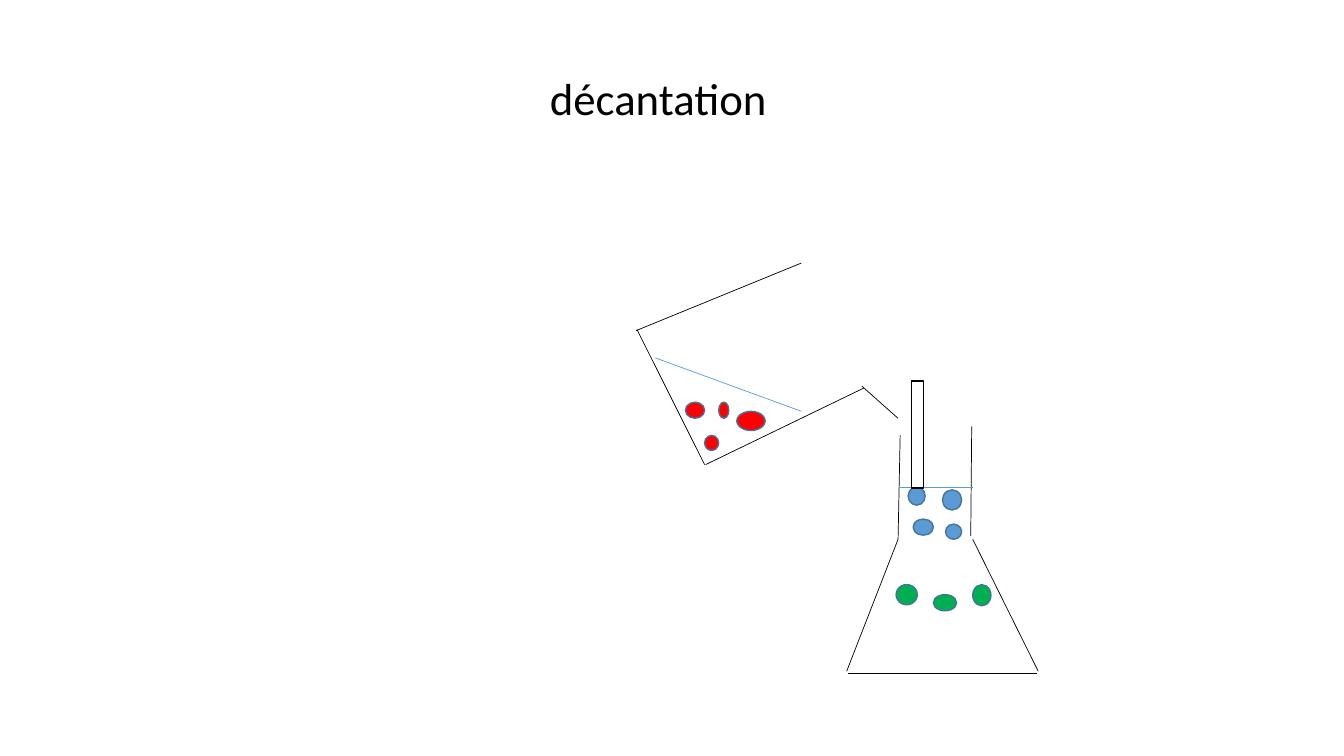
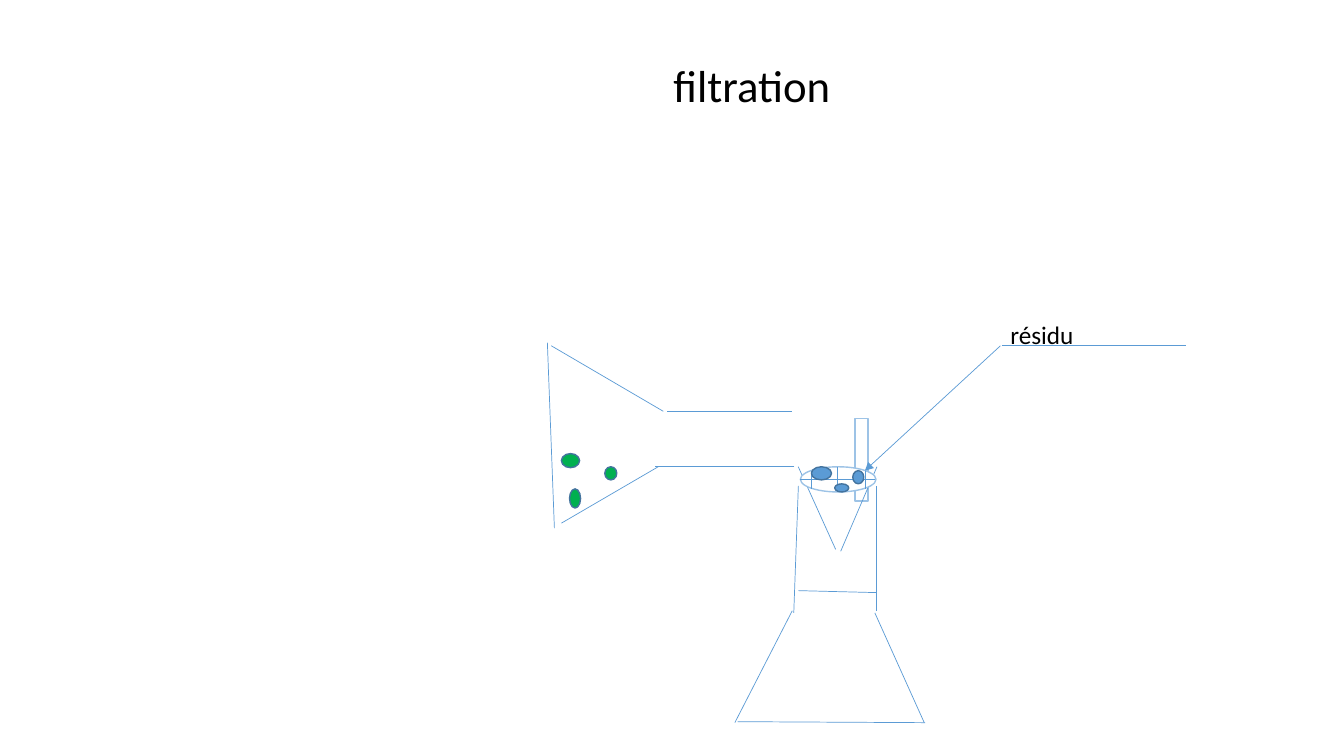
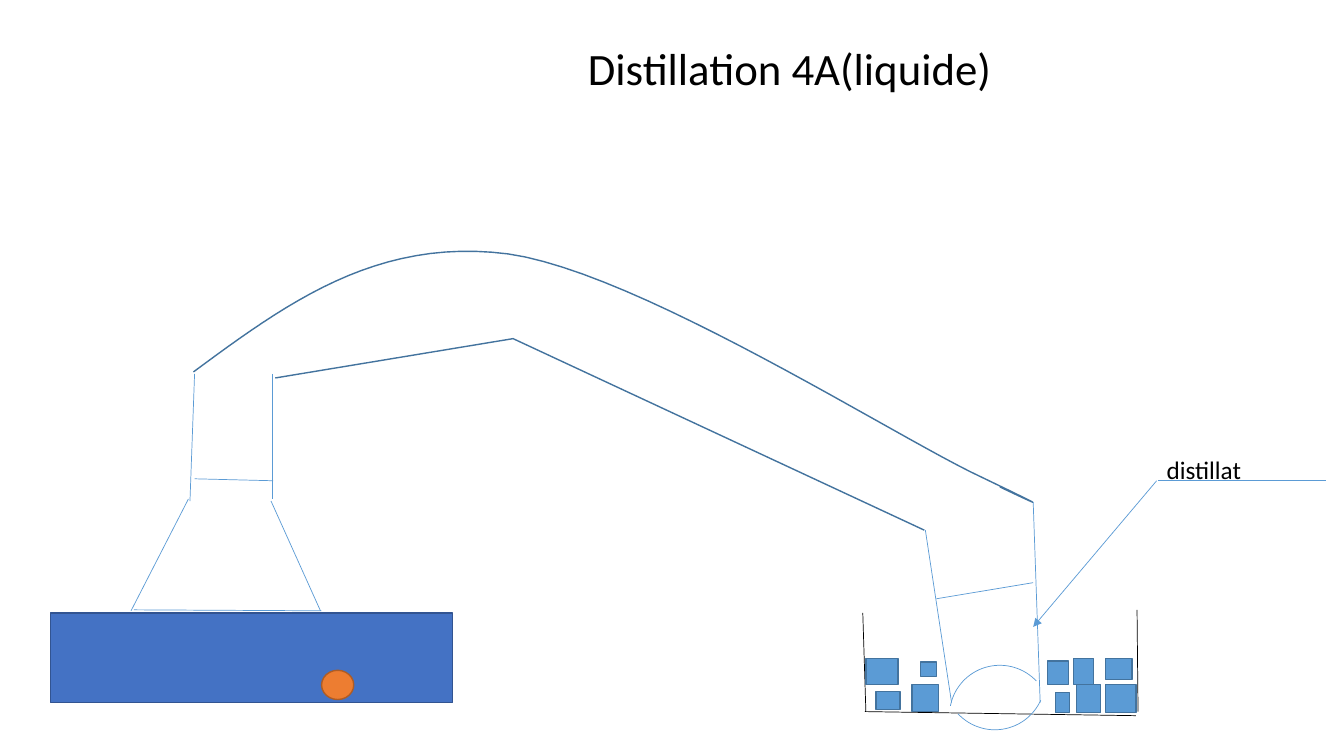
from lxml import etree
from pptx import Presentation
from pptx.dml.color import RGBColor
from pptx.enum.shapes import MSO_CONNECTOR, MSO_SHAPE
from pptx.enum.text import MSO_AUTO_SIZE, PP_ALIGN
from pptx.oxml.ns import qn
from pptx.util import Pt

STRAIGHT = MSO_CONNECTOR.STRAIGHT
OVAL, RECT, ARC = MSO_SHAPE.OVAL, MSO_SHAPE.RECTANGLE, MSO_SHAPE.ARC
LEFT, CENTER = PP_ALIGN.LEFT, PP_ALIGN.CENTER
GROW = MSO_AUTO_SIZE.SHAPE_TO_FIT_TEXT

BLACK = RGBColor(0x00, 0x00, 0x00)
WHITE = RGBColor(0xFF, 0xFF, 0xFF)
RED = RGBColor(0xFF, 0x00, 0x00)
GREEN = RGBColor(0x00, 0xB0, 0x50)
BLUE = RGBColor(0x5B, 0x9B, 0xD5)
BLUE_EDGE = RGBColor(0x43, 0x73, 0x9E)
PALE_BLUE = RGBColor(0x9D, 0xC3, 0xE6)
ROYAL, ROYAL_EDGE = RGBColor(0x44, 0x72, 0xC4), RGBColor(0x32, 0x54, 0x91)
ORANGE, ORANGE_EDGE = RGBColor(0xED, 0x7D, 0x31), RGBColor(0xAF, 0x5C, 0x24)

FONT = "Calibri"
TITLE_SIZE, LABEL_SIZE = 32, 18
TITLE_HEIGHT, LABEL_HEIGHT = 46.1, 28.8
THIN, EDGE = 0.5, 1

# Lines are (x1, y1, x2, y2); boxes are (left, top, width, height)

# Conical flask of the filtration and distillation pages, from its corner
FLASK = [
    (100.8, 0, 100.8, 89.3), (100, 90.8, 135.3, 169.2),
    (136, 169.2, 2, 168.5), (0, 169.2, 41, 89.3),
    (42.1, 90.8, 45.4, 0), (45.4, 74.9, 101.5, 76.3),
]

# Decantation
DECANT_TITLE = ("décantation", 311.8, 46.8, 316.8)
DECANT_FLASK = [
    (694.1, 304.6, 693.4, 383), (694.8, 385.2, 741.6, 479.5),
    (740.9, 481, 605.5, 481), (604.8, 479.5, 641.5, 385.2),
    (641.5, 385.2, 643, 311),
]
TILTED_BEAKER = [
    (641.5, 298.8, 615.6, 275.8), (617, 277.2, 504, 331.9),
    (503.3, 331.9, 455, 235.4), (454.3, 236.2, 572.4, 187.9),
]
DECANT_LEVELS = [(468, 255.6, 572.4, 293.8), (642.2, 347.8, 694.8, 347.8)]
DECANT_GRAINS = {
    RED: [(489.6, 287.3, 13.7, 11.5), (526.3, 293.8, 20.2, 13.7),
          (503.3, 311, 10.1, 10.8), (513.4, 287.3, 7.2, 11.5)],
    BLUE: [(648.7, 347.8, 12.2, 13), (673.2, 349.9, 13.7, 14.4),
           (652.3, 370.8, 14.4, 11.5), (675.4, 374.4, 11.5, 10.8)],
    GREEN: [(640.1, 417.6, 15.1, 14.4), (666.7, 424.8, 16.6, 11.5),
            (694.8, 417.6, 13, 15.1)],
}
DECANT_ROD = (650.9, 272.2, 8.6, 76.3)

# Filtration
FILTER_TITLE = ("filtration", 282.2, 37.4, 509.8)
FILTER_ROD = (610.6, 298.8, 9.4, 59)
FILTER_FLASK_AT = (524.9, 347)
FUNNEL = [(570.2, 333.4, 596.9, 392.4), (600.5, 393.8, 626.4, 333.4)]
FILTER_RIM = (571.7, 333.4, 54, 18)
FILTER_MESH = [
    (579.6, 336.2, 579.6, 349.2), (617.8, 336.2, 617.8, 349.2),
    (598.3, 333.4, 598.3, 351.4), (571.7, 342.7, 625, 342.7),
]
LYING_FLASK = [
    (567.4, 333.4, 468, 333.4), (470.2, 333.4, 401, 373.7),
    (396, 377.3, 391, 244.8), (393.8, 247, 473.8, 293.8),
    (476.6, 293.8, 565.9, 293.8),
]
FILTER_GRAINS = {
    GREEN: [(401, 324, 13, 10.1), (432, 333.4, 8.6, 9.4),
            (406.8, 349.2, 7.9, 13.7)],
    BLUE: [(579.6, 333.4, 14.4, 9.4), (609.1, 336.2, 7.9, 9.4),
           (596.2, 345.6, 10.1, 5.8)],
}
# Callout: text, corner, arrow tip, rule length, label width
RESIDUE = ("résidu", (714.6, 247), (617.8, 336.2), 132.5, 151.9)

# Distillation
DISTIL_TITLE = ("Distillation 4A(liquide) ", 258.5, 25.2, 618.5)
DISTIL_FLASK_AT = (93.6, 267.1)
HOTPLATE = (36, 437.8, 287.3, 64.1)
KNOB = (229.7, 478.8, 23, 20.9)
TUB = [
    (616.3, 437.8, 618.5, 508.3), (617.8, 508.3, 811.4, 511.2),
    (812.9, 508.3, 812.2, 435.6),
]
PIPE_TOP = [  # cubic curve: start, then two handles and an end per piece
    (138.2, 265.7), (203.8, 217.4), (268.6, 169.2), (362.9, 181.4),
    (456.5, 194.4), (641.5, 313.2), (700.6, 340.6),
    (758.9, 368.6), (736.6, 358.6), (714.2, 347.8),
]
PIPE_BOTTOM = [(196.6, 270), (366.5, 241.9), (660.2, 378.7)]
RECEIVER = [(738, 358.6, 743, 501.8), (661, 378.7, 679.7, 501.8)]
RECEIVER_ARCS = [  # box, rotation, start of the arc
    ((674.6, 449.3, 72, 72), 137, 148.5),
    ((678.2, 475.2, 72, 72), 316.5, 140.87),
]
ICE = [
    (618.5, 470.2, 23, 18.7), (651.6, 488.9, 18.7, 19.4),
    (789.8, 470.2, 18.7, 15.1), (766.8, 470.2, 14.4, 18.7),
    (789.8, 488.9, 21.6, 20.2), (748.1, 472.3, 15.1, 16.6),
    (769, 488.9, 17.3, 20.2), (753.8, 494.6, 10.1, 14.4),
    (625.7, 493.9, 17.3, 13), (657.4, 473, 11.5, 10.1),
]
RECEIVER_LEVEL = [(668.9, 427.7, 738, 416.2)]
DISTILLATE = ("distillat", (826.2, 343.4), (738, 447.8), 121.3, 133.9)


def add_lines(page, lines, color=BLUE, arrow=False):
    for ends in lines:
        line = page.shapes.add_connector(STRAIGHT, *map(Pt, ends))
        line.line.color.rgb = color
        line.line.width = Pt(THIN)
        properties = line._element.spPr
        if arrow:
            tip = etree.SubElement(properties.find(qn("a:ln")), qn("a:tailEnd"))
            tip.set("type", "triangle")
        etree.SubElement(properties, qn("a:effectLst"))


def style(shape, fill, edge, width=EDGE):
    shape.shadow.inherit = False
    if fill is None:
        shape.fill.background()
    else:
        shape.fill.solid()
        shape.fill.fore_color.rgb = fill
    shape.line.color.rgb = edge
    shape.line.width = Pt(width)


def add_shape(page, kind, box, fill, edge=BLUE_EDGE, width=EDGE):
    shape = page.shapes.add_shape(kind, *map(Pt, box))
    style(shape, fill, edge, width)
    return shape


def add_grains(page, grains):
    for color, boxes in grains.items():
        for box in boxes:
            add_shape(page, OVAL, box, color)


def add_outline(page, points):
    points = [(Pt(x), Pt(y)) for x, y in points]
    builder = page.shapes.build_freeform(*points[0], scale=1.0)
    builder.add_line_segments(points[1:], close=False)
    style(builder.convert_to_shape(), None, BLUE_EDGE)


def curve_points(knots, steps=24):
    """Points along a chain of cubic curves."""
    points = [knots[0]]
    for first in range(0, len(knots) - 1, 3):
        piece = knots[first:first + 4]
        for step in range(1, steps + 1):
            t = step / steps
            weights = ((1 - t) ** 3, 3 * t * (1 - t) ** 2,
                       3 * t * t * (1 - t), t ** 3)
            points.append(tuple(
                sum(w * knot[axis] for w, knot in zip(weights, piece))
                for axis in (0, 1)))
    return points


def add_text(page, text, box, size, align):
    frame = page.shapes.add_textbox(*map(Pt, box)).text_frame
    frame.word_wrap = True
    frame.auto_size = GROW
    para = frame.paragraphs[0]
    para.alignment = align
    span = para.add_run()
    span.text = text
    span.font.name = FONT
    span.font.size = Pt(size)
    span.font.color.rgb = BLACK


def add_title(page, text, left, top, width):
    add_text(page, text, (left, top, width, TITLE_HEIGHT), TITLE_SIZE, CENTER)


def add_flask(page, at):
    x, y = at
    add_lines(page, [(x + x1, y + y1, x + x2, y + y2)
                     for x1, y1, x2, y2 in FLASK])


def add_callout(page, text, corner, tip, length, width):
    x, y = corner
    add_lines(page, [(x, y, *tip)], arrow=True)
    add_lines(page, [(x + 1, y, x + length, y)])
    add_text(page, text, (x, y - 22.3, width, LABEL_HEIGHT), LABEL_SIZE, LEFT)


def build_decantation(page):
    add_lines(page, DECANT_FLASK + TILTED_BEAKER, BLACK)
    add_lines(page, DECANT_LEVELS)
    add_grains(page, DECANT_GRAINS)
    add_title(page, *DECANT_TITLE)
    add_shape(page, RECT, DECANT_ROD, WHITE, BLACK)


def build_filtration(page):
    add_shape(page, RECT, FILTER_ROD, WHITE, PALE_BLUE)
    add_flask(page, FILTER_FLASK_AT)
    add_lines(page, FUNNEL)
    add_shape(page, OVAL, FILTER_RIM, WHITE, PALE_BLUE)
    add_lines(page, FILTER_MESH + LYING_FLASK)
    add_grains(page, FILTER_GRAINS)
    add_title(page, *FILTER_TITLE)
    add_callout(page, *RESIDUE)


def build_distillation(page):
    # Heated flask
    add_flask(page, DISTIL_FLASK_AT)
    add_shape(page, RECT, HOTPLATE, ROYAL, ROYAL_EDGE)
    add_shape(page, OVAL, KNOB, ORANGE, ORANGE_EDGE)
    # Pipe and cooled receiver
    add_lines(page, TUB, BLACK)
    add_outline(page, curve_points(PIPE_TOP))
    add_outline(page, PIPE_BOTTOM)
    add_lines(page, RECEIVER)
    for box, rotation, start in RECEIVER_ARCS:
        arc = add_shape(page, ARC, box, None, BLUE, THIN)
        arc.rotation = rotation
        arc.adjustments[0] = start
        arc.adjustments[1] = 0
    for box in ICE:
        add_shape(page, RECT, box, BLUE)
    add_title(page, *DISTIL_TITLE)
    add_lines(page, RECEIVER_LEVEL)
    add_callout(page, *DISTILLATE)


def main():
    deck = Presentation()
    deck.slide_width, deck.slide_height = Pt(960), Pt(540)
    blank = deck.slide_layouts[6]
    for build in (build_decantation, build_filtration, build_distillation):
        build(deck.slides.add_slide(blank))
    deck.save("out.pptx")


if __name__ == "__main__":
    main()
